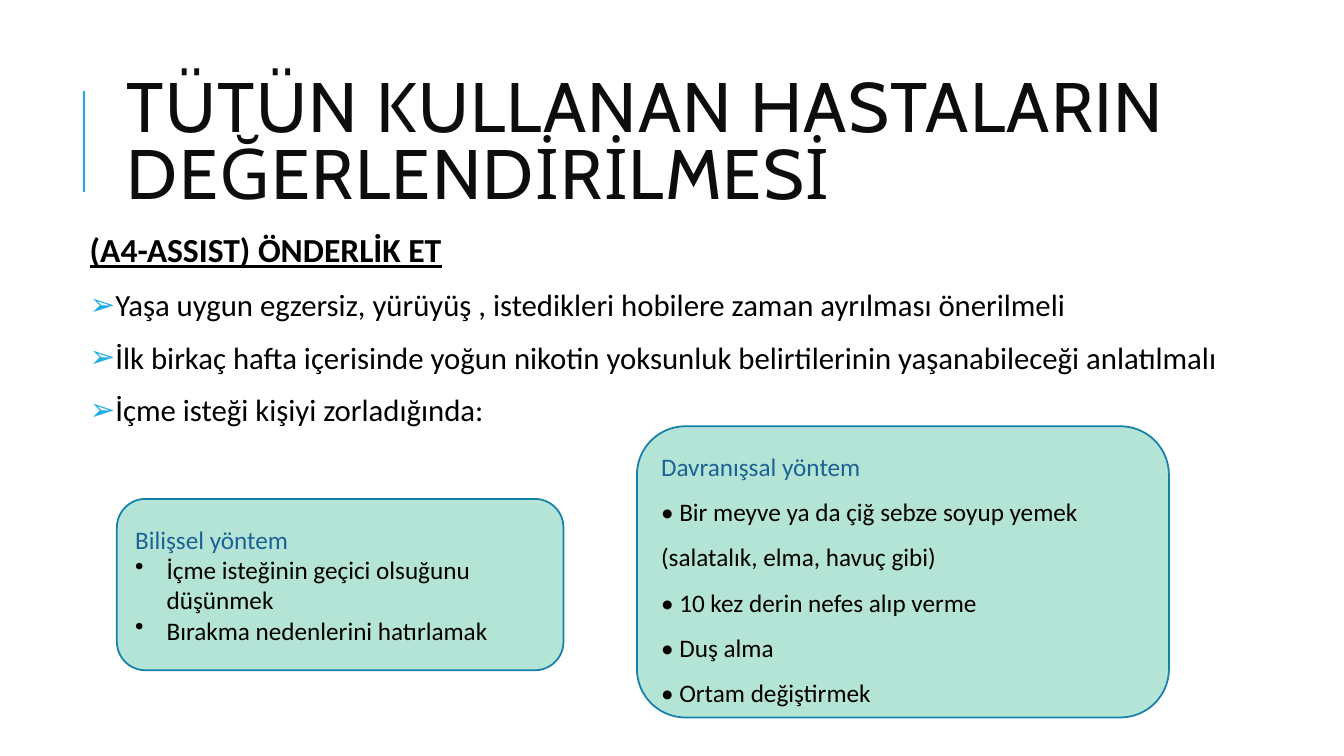
from lxml import etree
from pptx import Presentation
from pptx.dml.color import RGBColor
from pptx.enum.shapes import MSO_CONNECTOR, MSO_SHAPE
from pptx.enum.text import MSO_ANCHOR, MSO_AUTO_SIZE, PP_ALIGN
from pptx.oxml.ns import qn
from pptx.util import Pt

LEFT = PP_ALIGN.LEFT
MIDDLE, TOP = MSO_ANCHOR.MIDDLE, MSO_ANCHOR.TOP
NO_AUTOFIT = MSO_AUTO_SIZE.NONE
ROUNDED = MSO_SHAPE.ROUNDED_RECTANGLE
STRAIGHT = MSO_CONNECTOR.STRAIGHT

COLORS = {
    "accent": "1CADE4",
    "title": "0D0D0D",
    "text": "000000",
    "heading": "1D6294",
    "box": "B3E4D6",
    "border": "1580A9",
}

TITLE = "TÜTÜN KULLANAN HASTALARIN DEĞERLENDİRİLMESİ"
BODY = [
    "(A4-ASSIST) ÖNDERLİK ET",
    "Yaşa uygun egzersiz, yürüyüş , istedikleri hobilere zaman ayrılması önerilmeli",
    "İlk birkaç hafta içerisinde yoğun nikotin yoksunluk belirtilerinin "
    "yaşanabileceği anlatılmalı",
    "İçme isteği kişiyi zorladığında:",
]
BEHAVIOURAL = [
    "Davranışsal yöntem",
    "• Bir meyve ya da çiğ sebze soyup yemek",
    "(salatalık, elma, havuç gibi)",
    "• 10 kez derin nefes alıp verme",
    "• Duş alma",
    "• Ortam değiştirmek",
]
COGNITIVE = [
    "Bilişsel yöntem",
    "İçme isteğinin geçici olsuğunu düşünmek",
    "Bırakma nedenlerini hatırlamak",
]


def rgb(name):
    return RGBColor.from_string(COLORS[name])


def place(sp, left, top, width, height):
    sp.left, sp.top, sp.width, sp.height = Pt(left), Pt(top), Pt(width), Pt(height)


def set_bullet(p, char=None, indent=0, color="text"):
    """Give the paragraph a hanging bullet, or none when char is not set."""
    pPr = p._p.get_or_add_pPr()
    pPr.set("marL", str(Pt(indent)))
    pPr.set("indent", str(-Pt(indent)))
    if char is None:
        etree.SubElement(pPr, qn("a:buNone"))
        return
    bu_color = etree.SubElement(pPr, qn("a:buClr"))
    etree.SubElement(bu_color, qn("a:srgbClr"), val=COLORS[color])
    etree.SubElement(pPr, qn("a:buChar"), char=char)


def format_runs(p, size, color="text", name="Calibri", bold=False):
    for r in p.runs:
        r.font.size = Pt(size)
        r.font.name = name
        r.font.bold = bold
        r.font.color.rgb = rgb(color)


def add_title(slide):
    sp = slide.shapes.title
    place(sp, 83.5, 45.4, 866, 118)
    tf = sp.text_frame
    tf.text = TITLE
    tf.auto_size = NO_AUTOFIT
    tf.vertical_anchor = MIDDLE
    p = tf.paragraphs[0]
    p.alignment = LEFT
    p.line_spacing = 0.8
    format_runs(p, 50, "title", "Cabin")
    p.runs[0].font._element.set("spc", "100")


def add_body(slide):
    sp = slide.placeholders[1]
    place(sp, 60.5, 163.4, 861, 387)
    tf = sp.text_frame
    tf.text = "\n".join(BODY)
    tf.auto_size = NO_AUTOFIT
    tf.vertical_anchor = TOP
    tf.margin_left = tf.margin_right = tf.margin_top = tf.margin_bottom = Pt(3.6)
    for i, p in enumerate(tf.paragraphs):
        if i == 0:
            set_bullet(p)
            format_runs(p, 24, bold=True)
            p.runs[0].font.underline = True
        else:
            set_bullet(p, "➢", 7.2, "accent")
            format_runs(p, 22)
        p.alignment = LEFT
        p.line_spacing = 0.9
        p.space_before = Pt(12 if i else 0)
        p.space_after = Pt(2)


def add_method_box(slide, bounds, lines, line_spacing=1.0, bullet=None):
    sp = slide.shapes.add_shape(ROUNDED, *map(Pt, bounds))
    sp.shadow.inherit = False
    sp.fill.solid()
    sp.fill.fore_color.rgb = rgb("box")
    sp.line.color.rgb = rgb("border")
    sp.line.width = Pt(1.25)
    tf = sp.text_frame
    tf.text = "\n".join(lines)
    tf.word_wrap = True
    tf.vertical_anchor = MIDDLE
    for i, p in enumerate(tf.paragraphs):
        if i and bullet:
            set_bullet(p, bullet, 22.5)
        p.alignment = LEFT
        p.line_spacing = line_spacing
        format_runs(p, 18, "text" if i else "heading")


def add_accent_line(slide):
    line = slide.shapes.add_connector(STRAIGHT, Pt(60), Pt(137), Pt(60), Pt(65))
    line.line.color.rgb = rgb("accent")
    line.line.width = Pt(1.5)
    etree.SubElement(line._element.spPr, qn("a:effectLst"))


def main():
    prs = Presentation()
    prs.slide_width, prs.slide_height = Pt(960), Pt(540)
    slide = prs.slides.add_slide(prs.slide_layouts[1])
    add_accent_line(slide)
    add_title(slide)
    add_body(slide)
    add_method_box(slide, (455, 304.5, 380, 208), BEHAVIOURAL, line_spacing=1.5)
    add_method_box(slide, (83.5, 356.4, 319, 122.4), COGNITIVE, bullet="•")
    prs.save("out.pptx")


if __name__ == "__main__":
    main()
